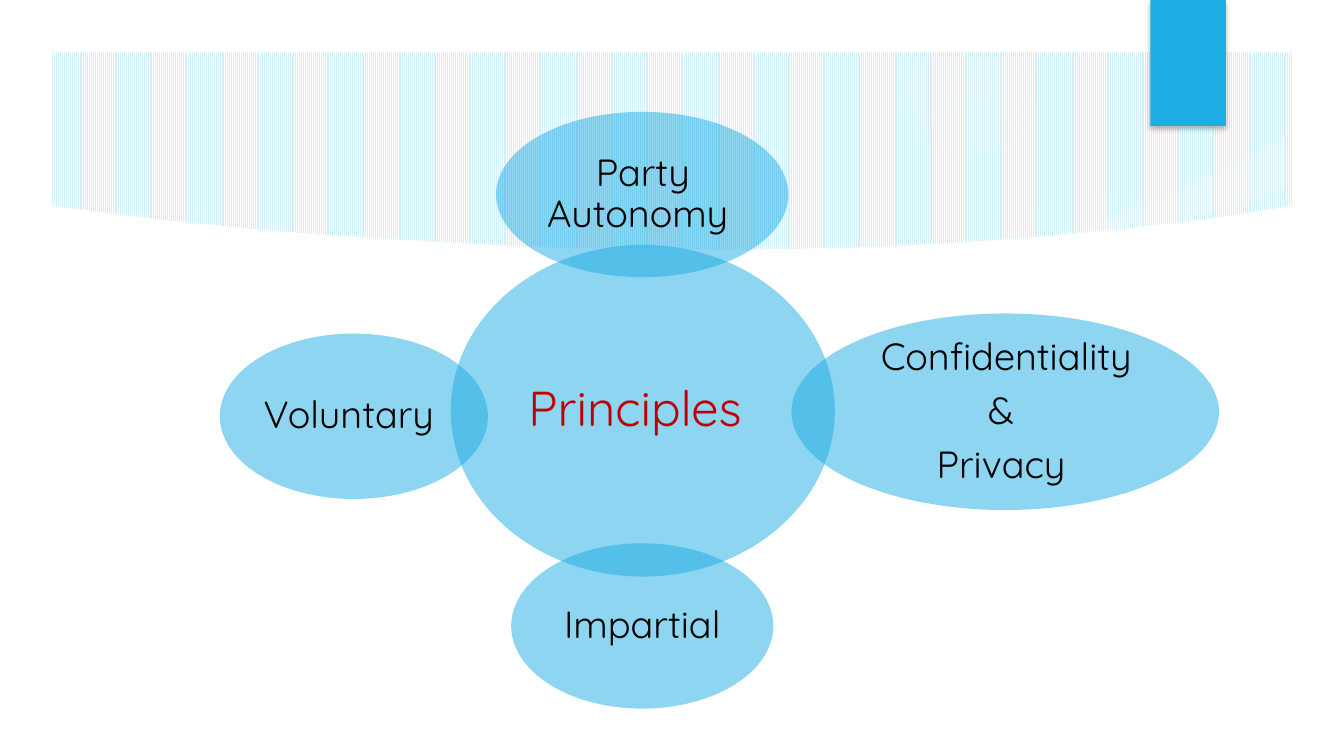
from lxml import etree
from pptx import Presentation
from pptx import util as u
from pptx.dml.color import RGBColor
from pptx.enum import dml, shapes, text
from pptx.oxml import ns

SHAPE = shapes.MSO_SHAPE
WAVE = [(0.5, 2.04), (0.94, 2.1), (1.59, 2.18), (2.49, 2.27), (3.21, 2.33),
        (4.01, 2.38), (4.88, 2.43), (5.59, 2.46), (6.32, 2.47), (7.08, 2.48),
        (7.86, 2.47), (8.67, 2.45), (9.49, 2.41), (10.32, 2.35),
        (11.16, 2.27), (12, 2.17), (12.84, 2.04), (12.84, 7), (0.5, 7)]
SWOOSH = [(9.34, 2.5), (10.3, 2.47), (11.6, 2.34), (12.89, 2.14), (12.83, 1.66),
          (12.36, 1.81), (11.9, 1.94), (11.44, 2.06), (10.98, 2.16),
          (10.53, 2.25), (10.1, 2.32), (9.69, 2.38), (9.3, 2.43)]
GLOWS = [
    ((0, 2.92, 4.58, 4.58), ((0, 11), (36, 10), (75, 0))),
    ((0, 3.17, 2.58, 2.58), ((0, 8), (36, 8), (72, 0))),
    ((9.41, 1.83, 3.08, 3.08), ((0, 7), (36, 6), (69, 0))),
    ((8.75, 0, 1.75, 1.75), ((0, 14), (36, 7), (73, 0))),
    ((9.41, 6.42, 1.08, 1.08), ((0, 14), (36, 7), (66, 0))),
]
PRINCIPLES = [
    ((4.47, 2.43, 3.81, 3.29), (5.02, 2.91, 2.69, 2.32), ["Principles "], 35, "C00000"),
    ((4.92, 1.11, 2.9, 1.64), (5.35, 1.35, 2.05, 1.16), ["Party Autonomy "], 27, "000000"),
    ((7.85, 3.11, 4.24, 1.95), (8.48, 3.4, 3, 1.38),
     ["Confidentiality", "& ", "Privacy "], 27, "000000"),
    ((5.07, 5.39, 2.6, 1.64), (5.45, 5.63, 1.84, 1.16), ["Impartial"], 27, "000000"),
    ((2.18, 3.31, 2.66, 1.64), (2.57, 3.55, 1.88, 1.16), ["Voluntary "], 27, "000000"),
]


def color(value):
    return RGBColor.from_string(value)


def child(parent, tag, **attributes):
    element = etree.SubElement(parent, ns.qn("a:" + tag))
    for name, value in attributes.items():
        element.set(name, str(value))
    return element


def apply(target, formats):
    for name, value in formats.items():
        setattr(target, name, value)


class PrinciplesSlide:
    """Draw the elements of the principles slide in one style."""

    font = "Quicksand"
    accent = "1CADE4"
    glow_color = "F2F4F5"

    def __init__(self, presentation):
        self.slide = presentation.slides.add_slide(presentation.slide_layouts[6])

    def background(self, foreground, back):
        fill = self.slide.background.fill
        fill.patterned()
        fill.pattern = dml.MSO_PATTERN.LIGHT_VERTICAL
        fill.fore_color.rgb = color(foreground)
        fill.back_color.rgb = color(back)

    def paint(self, shape, fill, opacity=100):
        shape.shadow.inherit = False
        shape.line.fill.background()
        shape.fill.solid()
        shape.fill.fore_color.rgb = color(fill)
        if opacity < 100:
            solid = shape.element.spPr.find(ns.qn("a:solidFill"))
            child(solid[0], "alpha", val=opacity * 1000)
        return shape

    def preset(self, kind, box, fill, opacity=100):
        shape = self.slide.shapes.add_shape(kind, *map(u.Inches, box))
        return self.paint(shape, fill, opacity)

    def outline(self, points, fill, opacity=100):
        scaled = [(u.Inches(x), u.Inches(y)) for x, y in points]
        builder = self.slide.shapes.build_freeform(*scaled[0])
        builder.add_line_segments(scaled[1:], close=True)
        return self.paint(builder.convert_to_shape(), fill, opacity)

    def glow(self, box, stops):
        shape = self.preset(SHAPE.OVAL, box, self.glow_color)
        properties = shape.element.spPr
        gradient = etree.Element(ns.qn("a:gradFill"), rotWithShape="1")
        stop_list = child(gradient, "gsLst")
        for position, opacity in stops:
            stop = child(stop_list, "gs", pos=position * 1000)
            shade = child(stop, "srgbClr", val=self.glow_color)
            child(shade, "alpha", val=opacity * 1000)
        circle = child(gradient, "path", path="circle")
        child(circle, "fillToRect", l=50000, t=50000, r=50000, b=50000)
        properties.replace(properties.find(ns.qn("a:solidFill")), gradient)

    def tab(self, box):
        shape = self.preset(SHAPE.RECTANGLE, box, self.accent)
        effects = shape.element.spPr.find(ns.qn("a:effectLst"))
        shadow = child(effects, "outerShdw", blurRad=u.Pt(4), dist=u.Pt(2),
                       dir=90 * 60000, algn="ctr", rotWithShape=0)
        child(child(shadow, "srgbClr", val="000000"), "alpha", val=28000)

    def label(self, box, lines, size, ink):
        frame = self.slide.shapes.add_textbox(*map(u.Inches, box)).text_frame
        margin = u.Inches(0.05 if size > 30 else 0.04)
        apply(frame, {"word_wrap": True, "vertical_anchor": text.MSO_ANCHOR.MIDDLE,
                      "margin_left": margin, "margin_right": margin,
                      "margin_top": margin, "margin_bottom": margin})
        frame.text = "\n".join(lines)
        for paragraph in frame.paragraphs:
            apply(paragraph, {"alignment": text.PP_ALIGN.CENTER, "line_spacing": 0.9,
                              "space_after": u.Pt(size * 0.35)})
            apply(paragraph.font, {"name": self.font, "size": u.Pt(size)})
            paragraph.font.color.rgb = color(ink)

    def principle(self, oval, box, lines, size, ink):
        self.preset(SHAPE.OVAL, oval, self.accent, 50)
        self.label(box, lines, size, ink)


def main():
    presentation = Presentation()
    apply(presentation, {"slide_width": u.Inches(13.33), "slide_height": u.Inches(7.5)})
    page = PrinciplesSlide(presentation)
    page.background("D2EFFA", "FFFFFF")
    for box, stops in GLOWS:
        page.glow(box, stops)
    page.outline(SWOOSH, "FFFFFF", 20).rotation = 350.2
    page.outline(WAVE, "FFFFFF")
    border = page.preset(SHAPE.FRAME, (0, 0, 13.33, 7.5), "FFFFFF")
    border.adjustments[0] = 0.52 / 7.5
    page.tab((11.41, 0, 0.75, 1.25))
    for principle in PRINCIPLES:
        page.principle(*principle)
    presentation.save("out.pptx")


if __name__ == "__main__":
    main()
